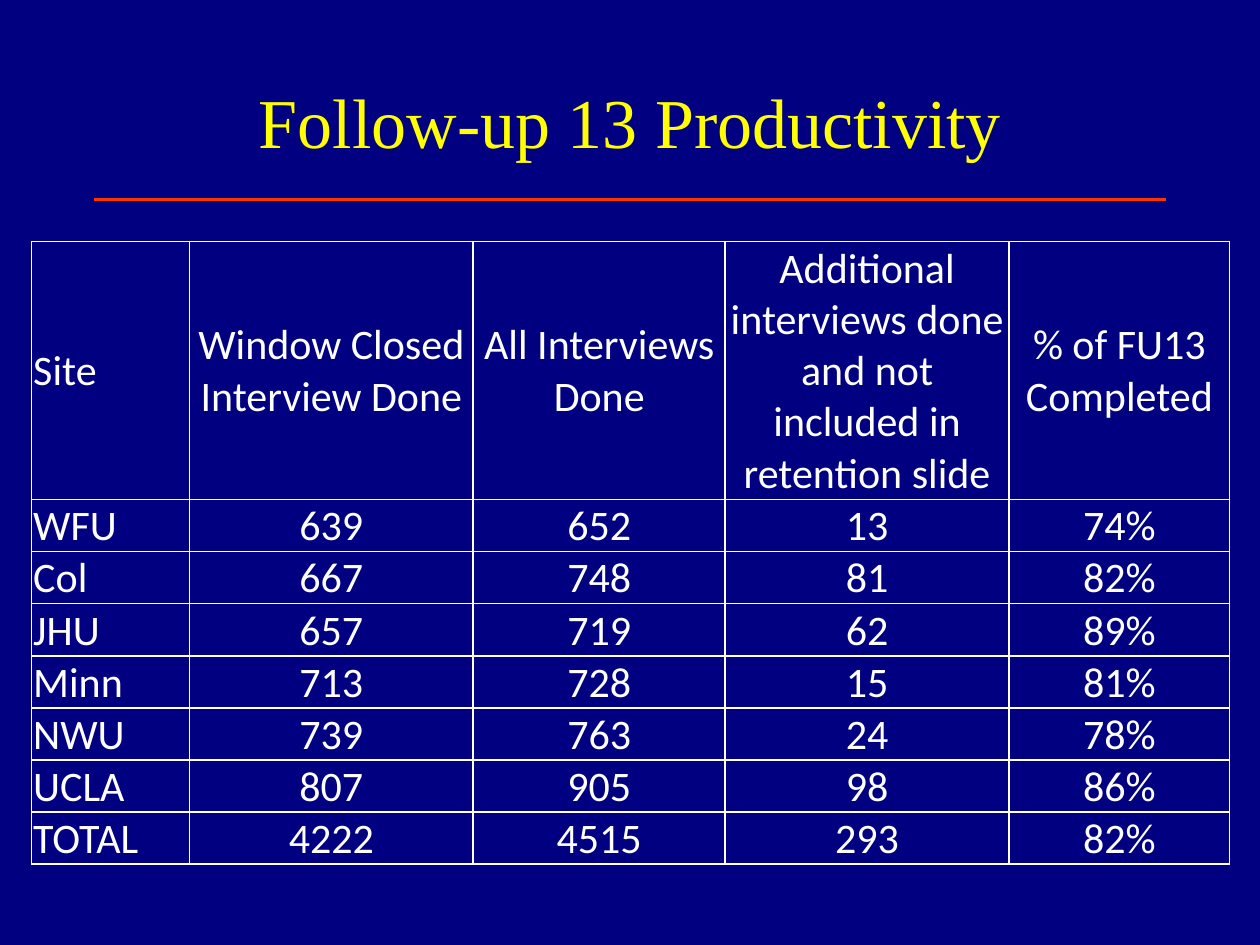
from dataclasses import dataclass

from lxml import etree
from pptx import Presentation
from pptx.dml.color import RGBColor
from pptx.enum.shapes import MSO_CONNECTOR
from pptx.enum.text import MSO_ANCHOR, PP_ALIGN
from pptx.oxml.ns import qn
from pptx.util import Cm, Pt

LEFT, CENTER = PP_ALIGN.LEFT, PP_ALIGN.CENTER
MIDDLE = MSO_ANCHOR.MIDDLE
STRAIGHT = MSO_CONNECTOR.STRAIGHT

NAVY, WHITE, YELLOW, ORANGE = "000080", "FFFFFF", "FFFF00", "FF3300"
HEADER_HEIGHT, ROW_HEIGHT = 5.2, 1.05
CELL_INSET = 0.03


@dataclass
class Column:
    heading: str
    width: float
    values: list[str]
    alignment: PP_ALIGN = CENTER


COLUMNS = [
    Column("Site", 3.18, ["WFU", "Col", "JHU", "Minn", "NWU", "UCLA", "TOTAL"], LEFT),
    Column("Window Closed Interview Done", 5.72,
           ["639", "667", "657", "713", "739", "807", "4222"]),
    Column("All Interviews Done", 5.08,
           ["652", "748", "719", "728", "763", "905", "4515"]),
    Column("Additional interviews done and not included in retention slide", 5.72,
           ["13", "81", "62", "15", "24", "98", "293"]),
    Column("% of FU13 Completed", 4.45,
           ["74%", "82%", "89%", "81%", "78%", "86%", "82%"]),
]


def color(value: str) -> RGBColor:
    return RGBColor.from_string(value)


def write(frame, text: str, font: str, size: float, hue: str, alignment: PP_ALIGN) -> None:
    frame.word_wrap = True
    paragraph = frame.paragraphs[0]
    paragraph.text = text
    paragraph.alignment = alignment
    paragraph.font.name = font
    paragraph.font.size = Pt(size)
    paragraph.font.color.rgb = color(hue)


def add_borders(cell, hue: str, width: float) -> None:
    properties = cell._tc.get_or_add_tcPr()
    # Borders must come before the fill
    for index, side in enumerate(("a:lnL", "a:lnR", "a:lnT", "a:lnB")):
        border = etree.Element(qn(side), w=str(Pt(width)))
        fill = etree.SubElement(border, qn("a:solidFill"))
        etree.SubElement(fill, qn("a:srgbClr"), val=hue)
        properties.insert(index, border)


def add_title(slide, text: str) -> None:
    box = slide.shapes.add_textbox(Cm(1.9), Cm(0.85), Cm(21.6), Cm(3.17))
    box.text_frame.vertical_anchor = MIDDLE
    write(box.text_frame, text, "Times New Roman", 40, YELLOW, CENTER)


def add_rule(slide) -> None:
    line = slide.shapes.add_connector(STRAIGHT, Cm(1.9), Cm(4.02), Cm(23.5), Cm(4.02))
    line.line.color.rgb = color(ORANGE)
    line.line.width = Pt(2)
    etree.SubElement(line._element.spPr, qn("a:effectLst"))


def add_productivity_table(slide, columns: list[Column]) -> None:
    row_count = len(columns[0].values) + 1
    width = sum(column.width for column in columns)
    height = HEADER_HEIGHT + ROW_HEIGHT * (row_count - 1)
    table = slide.shapes.add_table(row_count, len(columns), Cm(0.64), Cm(4.87),
                                   Cm(width), Cm(height)).table
    table.first_row = table.horz_banding = False
    for index, row in enumerate(table.rows):
        row.height = Cm(ROW_HEIGHT if index else HEADER_HEIGHT)
    for column_index, column in enumerate(columns):
        table.columns[column_index].width = Cm(column.width)
        for row_index, text in enumerate([column.heading, *column.values]):
            cell = table.cell(row_index, column_index)
            cell.fill.background()
            cell.vertical_anchor = MIDDLE
            cell.margin_left = cell.margin_right = cell.margin_top = Cm(CELL_INSET)
            cell.margin_bottom = 0
            write(cell.text_frame, text, "Calibri", 24, WHITE, column.alignment)
            add_borders(cell, WHITE, 1)


def main() -> None:
    presentation = Presentation()
    presentation.slide_width, presentation.slide_height = Cm(25.4), Cm(19.05)
    slide = presentation.slides.add_slide(presentation.slide_layouts[6])
    slide.background.fill.solid()
    slide.background.fill.fore_color.rgb = color(NAVY)

    # Heading
    add_rule(slide)
    add_title(slide, "Follow-up 13 Productivity")

    # Results by site
    add_productivity_table(slide, COLUMNS)
    presentation.save("out.pptx")


if __name__ == "__main__":
    main()
